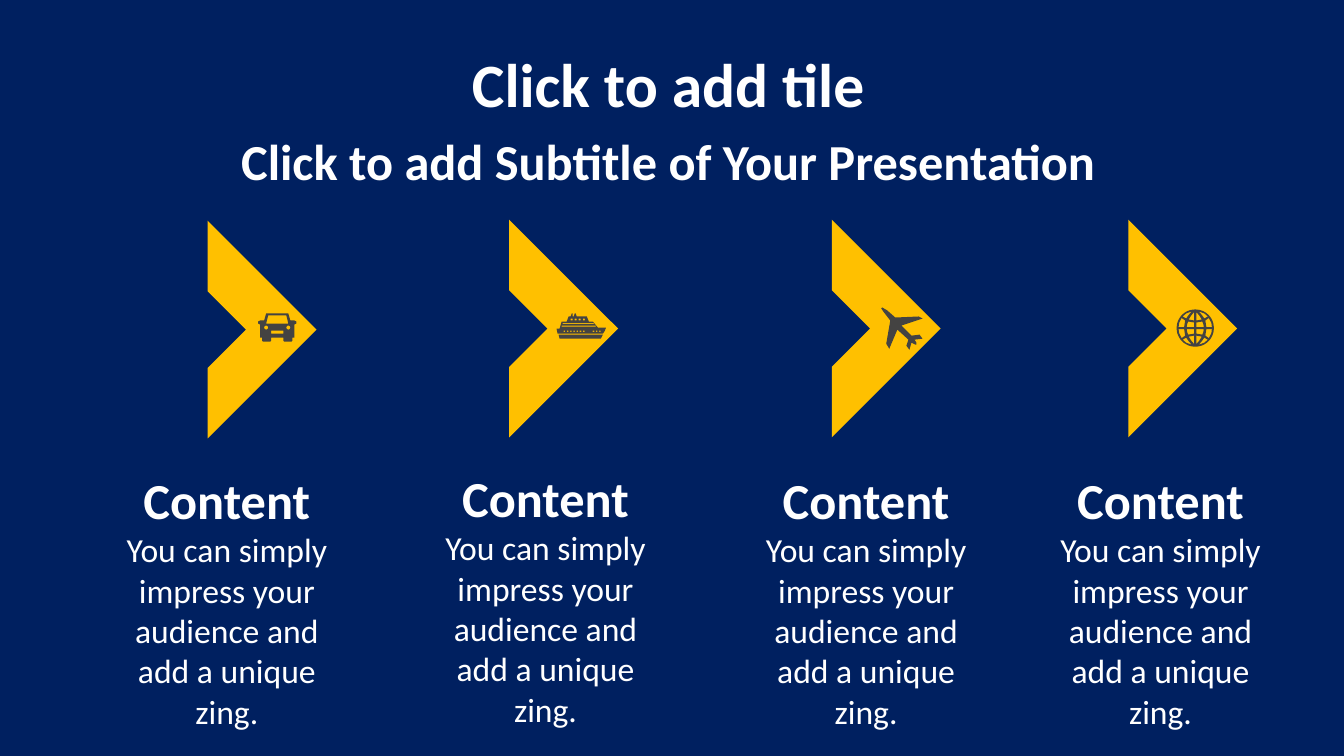
from itertools import product
from math import cos, pi, sin

from pptx import Presentation
from pptx import util as u
from pptx.dml.color import RGBColor
from pptx.enum import text as t

WIDE, HIGH = 13.33, 7.5
NAVY, GOLD, GREY, WHITE = "002060", "FFC000", "444342", "FFFFFF"
FACE = "Calibri"
BODY = "You can simply impress your audience and add a unique zing."


def paint(fill, tone):
    """Make a fill solid in a hex colour."""
    fill.solid()
    fill.fore_color.rgb = RGBColor.from_string(tone)


def write(frame, words, first=False, size=24, bold=False, gap=None):
    """Write one centred paragraph into a text frame."""
    par = frame.paragraphs[0] if first else frame.add_paragraph()
    par.alignment = t.PP_ALIGN.CENTER
    par.line_spacing = gap
    run = par.add_run()
    run.text = words
    run.font.name, run.font.size, run.font.bold = FACE, u.Pt(size), bold
    run.font.color.rgb = RGBColor.from_string(WHITE)


def place(shape, left, top, wide, high):
    """Move a shape to a box in inches."""
    shape.left, shape.top = u.Inches(left), u.Inches(top)
    shape.width, shape.height = u.Inches(wide), u.Inches(high)


def draw(slide, left, top, loops, tone):
    """Draw closed loops as one freeform, inner loops being holes."""
    loops = [[(x * 1000, y * 1000) for x, y in loop] for loop in loops]
    pen = slide.shapes.build_freeform(*loops[0][0], scale=914.4)
    pen.add_line_segments(loops[0][1:], close=True)
    for loop in loops[1:]:
        pen.move_to(*loop[0])
        pen.add_line_segments(loop[1:], close=True)
    shape = pen.convert_to_shape(u.Inches(left), u.Inches(top))
    shape.shadow.inherit = False
    shape.line.fill.background()
    paint(shape.fill, tone)


def disc(x, y, r, count=48):
    """Return a round loop."""
    turns = [2 * pi * i / count for i in range(count)]
    return [(x + r * cos(a), y + r * sin(a)) for a in turns]


def rect(x, y, wide, high):
    """Return a box loop."""
    return [(x, y), (x + wide, y), (x + wide, y + high), (x, y + high)]


def car():
    """Return the loops of a car seen from the front."""
    half = [(0.11, 0), (0.08, 0), (0.06, 0.07), (0.02, 0.07), (0, 0.08),
            (0, 0.1), (0.02, 0.11), (0.02, 0.24), (0.04, 0.24),
            (0.04, 0.27), (0.05, 0.28), (0.12, 0.28), (0.13, 0.27),
            (0.13, 0.24)]
    body = half + [(0.38 - x, y) for x, y in reversed(half)]
    pane = [(0.1, 0.02), (0.28, 0.02), (0.3, 0.1), (0.08, 0.1)]
    lamps = [disc(x, 0.14, 0.02, 16) for x in (0.08, 0.3)]
    return [body, pane, rect(0.13, 0.17, 0.12, 0.03), *lamps]


def ship():
    """Return the loops of a liner seen from the side."""
    hull = [(0.18, 0), (0.19, 0), (0.2, 0.03), (0.3, 0.03), (0.32, 0.08),
            (0.36, 0.08), (0.41, 0.14), (0.49, 0.14), (0.48, 0.17),
            (0.46, 0.2), (0.01, 0.2), (0, 0.15), (0.03, 0.15),
            (0.05, 0.08), (0.1, 0.08), (0.12, 0.03), (0.14, 0.03),
            (0.15, 0), (0.16, 0), (0.16, 0.03), (0.17, 0.03)]
    keel = [(0.02, 0.21), (0.46, 0.21), (0.44, 0.25), (0.03, 0.25)]
    ports = [rect(0.07 + 0.032 * i, 0.17, 0.016, 0.012)
             for i in range(12) if i not in (7, 8)]
    panes = [rect(0.14 + 0.04 * i, 0.05, 0.02, 0.02) for i in range(4)]
    decks = [rect(0.05, 0.12, 0.34, 0.01), rect(0.06, 0.095, 0.31, 0.01)]
    return [hull, keel, *ports, *panes, *decks]


def plane():
    """Return the loop of a plane."""
    return [[(0.41, 0.31), (0.33, 0.32), (0.35, 0.35), (0.35, 0.37),
             (0.34, 0.37), (0.3, 0.35), (0.28, 0.42), (0.25, 0.38),
             (0.27, 0.32), (0.16, 0.22), (0.08, 0.41), (0.05, 0.36),
             (0.09, 0.13), (0.02, 0.04), (0, 0.01), (0.01, 0),
             (0.06, 0.03), (0.14, 0.1), (0.37, 0.09), (0.41, 0.11),
             (0.2, 0.18), (0.3, 0.28), (0.38, 0.27)]]


def globe():
    """Return a disc whose cells are mirrored from one quarter."""
    mid = 0.185
    cells = [[(0.01, 0.01), (0.085, 0.01), (0.08, 0.04), (0.07, 0.065),
              (0.01, 0.055)],
             [(0.01, 0.075), (0.065, 0.085), (0.04, 0.125), (0.01, 0.16)],
             [(0.11, 0.01), (0.165, 0.01), (0.16, 0.05), (0.135, 0.1),
              (0.1, 0.075)],
             [(0.035, 0.165), (0.065, 0.13), (0.09, 0.095), (0.125, 0.115),
              (0.09, 0.145)]]
    holes = [[(mid + a * x, mid + b * y) for x, y in cell]
             for cell, a, b in product(cells, (-1, 1), (-1, 1))]
    return [disc(mid, mid, mid), *holes]


def head(slide):
    """Set the title and the subtitle below it."""
    sub = slide.shapes.add_textbox(0, 0, 0, 0)
    rows = [(slide.shapes.title, 0.49, "Click to add tile", 44),
            (sub, 1.31, "Click to add Subtitle of Your Presentation", 36)]
    for shape, top, words, size in rows:
        place(shape, 0.88, top, 11.5, 0.87)
        frame = shape.text_frame
        frame.word_wrap = True
        frame.auto_size = t.MSO_AUTO_SIZE.NONE
        frame.vertical_anchor = t.MSO_ANCHOR.TOP
        write(frame, words, first=True, size=size, bold=True, gap=0.9)


def arrow(slide, left, top, icon, dx, dy):
    """Draw a chevron with its icon."""
    long, band = 1.08, 0.7
    edge = [(0, 0), (long, long), (0, 2 * long), (0, 2 * long - band),
            (long - band, long), (0, band)]
    draw(slide, left, top, [edge], GOLD)
    draw(slide, left + dx, top + dy, icon(), GREY)


def note(slide, left, top):
    """Set a heading and its text in a column."""
    box = slide.shapes.add_textbox(0, 0, 0, 0)
    place(box, left, top, 2.38, 2.32)
    frame = box.text_frame
    frame.word_wrap = True
    frame.auto_size = t.MSO_AUTO_SIZE.SHAPE_TO_FIT_TEXT
    frame.vertical_anchor = t.MSO_ANCHOR.MIDDLE
    write(frame, "Content", first=True, size=36, bold=True)
    write(frame, BODY)


def main():
    """Build and save the slide."""
    deck = Presentation()
    deck.slide_width, deck.slide_height = u.Inches(WIDE), u.Inches(HIGH)
    slide = deck.slides.add_slide(deck.slide_layouts[5])
    paint(slide.background.fill, NAVY)
    head(slide)
    steps = [(2.06, 2.19, car, 0.5, 0.92, 1.06, 4.79),
             (5.05, 2.18, ship, 0.47, 0.93, 4.22, 4.77),
             (8.25, 2.18, plane, 0.49, 0.87, 7.4, 4.79),
             (11.19, 2.18, globe, 0.48, 0.89, 10.32, 4.79)]
    for *mark, left, top in steps:
        arrow(slide, *mark)
        note(slide, left, top)
    deck.save("out.pptx")


if __name__ == "__main__":
    main()
